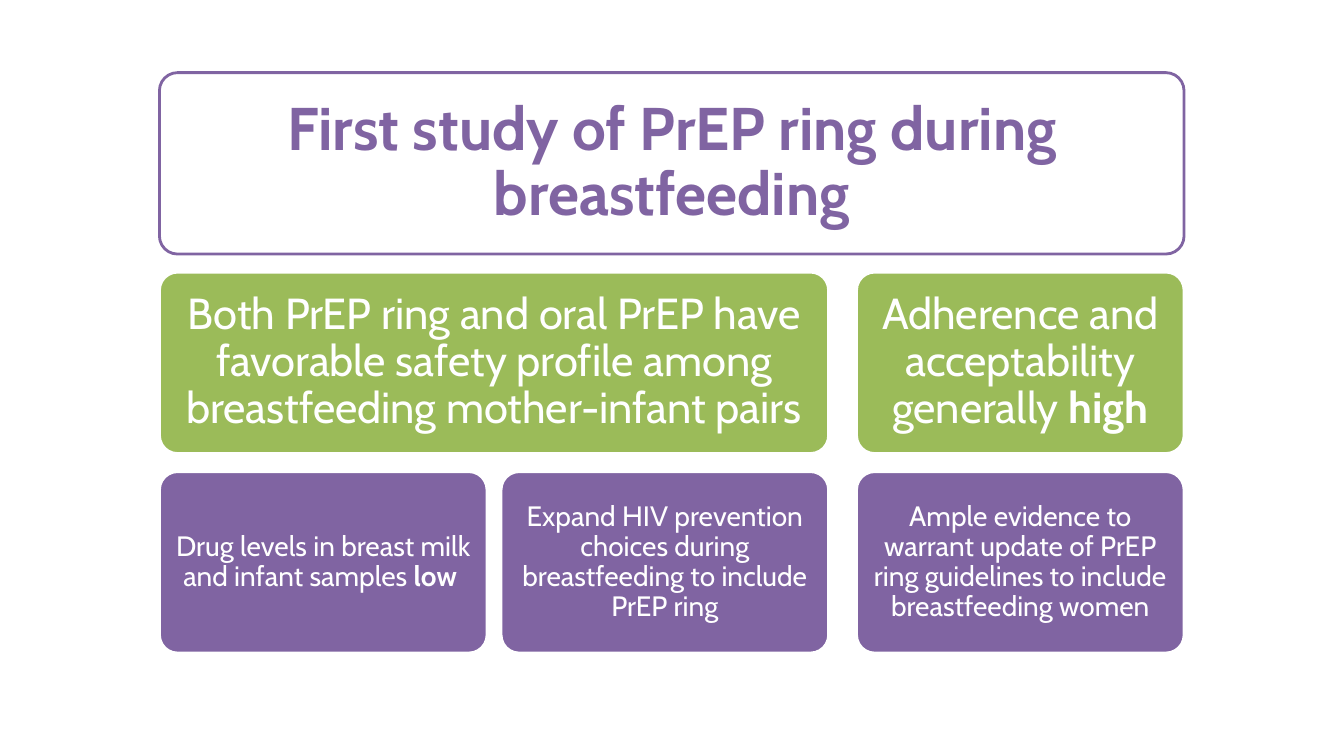
from pptx import Presentation
from pptx.dml.color import RGBColor
from pptx.enum.shapes import MSO_SHAPE as Shape
from pptx.enum.text import MSO_ANCHOR as Anchor, MSO_AUTO_SIZE as Fit, PP_ALIGN as Align
from pptx.util import Pt


def paint(color, code):
    color.rgb = RGBColor.from_string(code)


def write(box, text, bold, size, pad, code):
    frame = box.text_frame
    frame.word_wrap = True
    frame.auto_size = Fit.NONE
    frame.vertical_anchor = Anchor.MIDDLE
    frame.margin_left = frame.margin_right = Pt(pad)
    frame.margin_top = frame.margin_bottom = Pt(pad)
    frame.text = text
    para = frame.paragraphs[0]
    para.alignment = Align.CENTER
    para.line_spacing = 0.9
    if bold:
        para.add_run().text = bold
    for run in para.runs:
        run.font.name = "Cabin"
        run.font.size = Pt(size)
        run.font.bold = run.text == bold
        paint(run.font.color, code)


WHITE, GREEN, PURPLE = "FFFFFF", "9BBB59", "8064A2"
LEFT, MID, RIGHT = 113.9, 357.9, 611.8
TOP, STEP, HIGH = 51.9, 142.5, 129.6
ONE, TWO, ALL = 234, 478, 731.9

deck = Presentation()
deck.slide_width, deck.slide_height = Pt(960), Pt(540)
slide = deck.slides.add_slide(deck.slide_layouts[5])
shapes = slide.shapes
title = shapes.title

cards = [
    (LEFT, 0, ALL, WHITE, PURPLE, 0, 0, "", ""),
    (LEFT, 1, TWO, GREEN, WHITE, 31, 9.3,
     "Both PrEP ring and oral PrEP have favorable safety profile among breastfeeding mother-infant pairs", ""),
    (LEFT, 2, ONE, PURPLE, WHITE, 20, 6,
     "Drug levels in breast milk and infant samples ", "low "),
    (MID, 2, ONE, PURPLE, WHITE, 20, 6,
     "Expand HIV prevention choices during breastfeeding to include PrEP ring", ""),
    (RIGHT, 1, ONE, GREEN, WHITE, 31, 9.3,
     "Adherence and acceptability generally ", "high"),
    (RIGHT, 2, ONE, PURPLE, WHITE, 20, 6,
     "Ample evidence to warrant update of PrEP ring guidelines to include breastfeeding women", ""),
]

for left, row, wide, fill, line, size, pad, text, bold in cards:
    card = shapes.add_shape(Shape.ROUNDED_RECTANGLE, Pt(left), Pt(TOP + row * STEP), Pt(wide), Pt(HIGH))
    card.adjustments[0] = 0.1
    card.shadow.inherit = False
    card.fill.solid()
    paint(card.fill.fore_color, fill)
    paint(card.line.color, line)
    card.line.width = Pt(2)
    if text:
        write(card, text, bold, size, pad, line)

inset = 3.8
title.left, title.top = Pt(LEFT + inset), Pt(TOP + inset)
title.width, title.height = Pt(ALL - 2 * inset), Pt(HIGH - 2 * inset)
head = "First study of PrEP ring during breastfeeding"
write(title, head, "", 43, 12.9, PURPLE)
title.text_frame.paragraphs[0].runs[0].font.bold = True
title.element.getparent().append(title.element)

deck.save("out.pptx")
